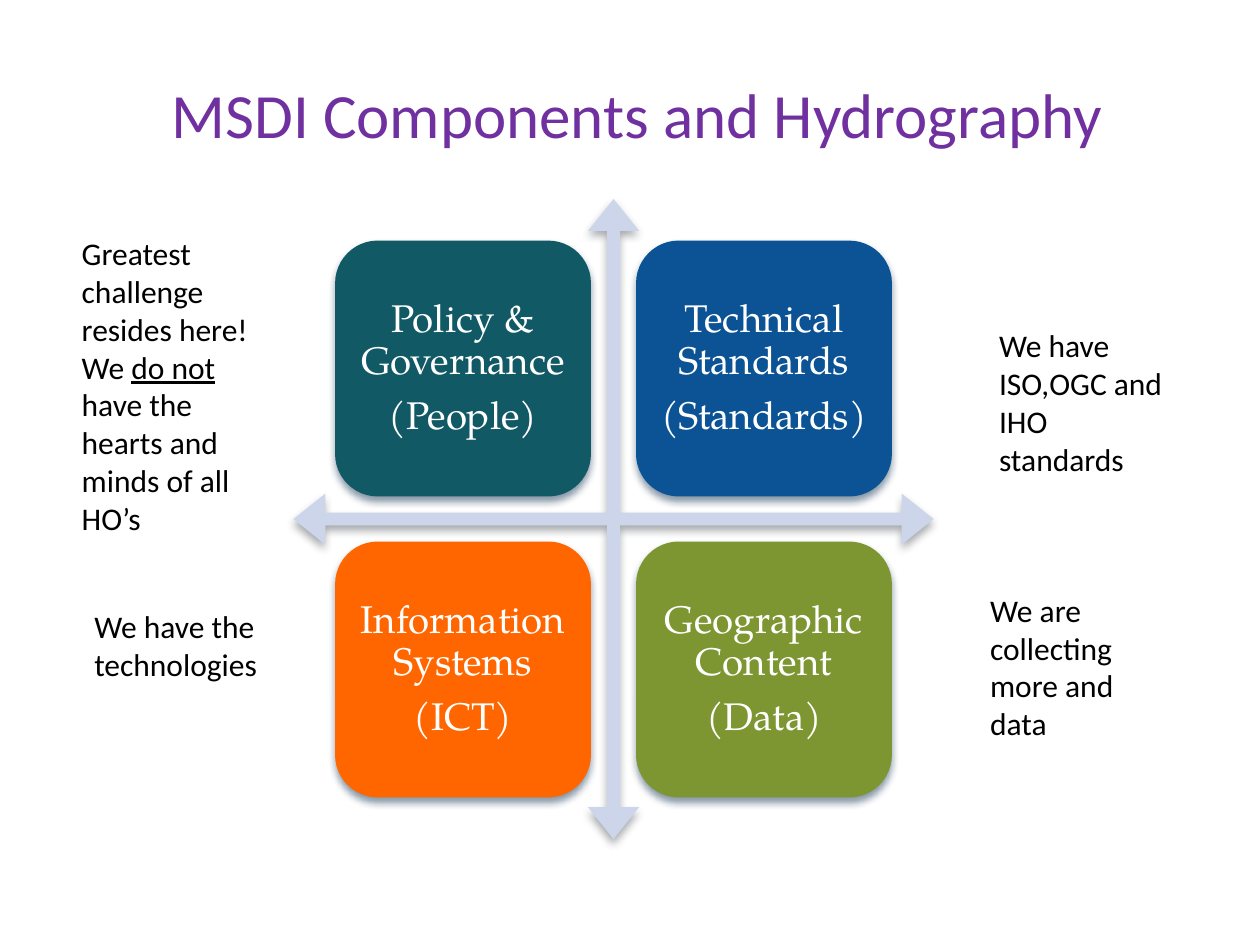
"""Build the slide on MSDI components and hydrography."""
from dataclasses import dataclass

from lxml import etree
from pptx import Presentation
from pptx.dml.color import RGBColor
from pptx.enum.shapes import MSO_SHAPE
from pptx.enum.text import MSO_ANCHOR, MSO_AUTO_SIZE, PP_ALIGN
from pptx.oxml.ns import qn
from pptx.util import Pt

QUAD_ARROW = MSO_SHAPE.QUAD_ARROW
ROUNDED = MSO_SHAPE.ROUNDED_RECTANGLE
MIDDLE = MSO_ANCHOR.MIDDLE
TOP = MSO_ANCHOR.TOP
CENTER = PP_ALIGN.CENTER
LEFT = PP_ALIGN.LEFT
GROW = MSO_AUTO_SIZE.SHAPE_TO_FIT_TEXT


@dataclass(frozen=True)
class Theme:
    body_font: str = "Calibri"
    tile_font: str = "TeX Gyre Pagella"
    title_size: float = 36
    tile_size: float = 22
    note_size: float = 18
    title: str = "7030A0"
    note: str = "000000"
    tile_text: str = "FFFFFF"
    axes: str = "CCD5EA"
    axes_shadow: str = "474B53"
    tile_shadow: str = "042747"
    policy: str = "115964"
    standards: str = "0B5394"
    systems: str = "FF6600"
    content: str = "7E9632"


def write(frame, paragraphs, *, font, size, color, align=LEFT, anchor=TOP,
          line_spacing=None, space_after=None, underlined=None):
    frame.word_wrap = True
    frame.vertical_anchor = anchor
    for index, runs in enumerate(paragraphs):
        paragraph = frame.add_paragraph() if index else frame.paragraphs[0]
        paragraph.alignment = align
        paragraph.line_spacing = line_spacing
        if space_after is not None:
            paragraph.space_after = Pt(space_after)
        for text in runs:
            run = paragraph.add_run()
            run.text = text
            run.font.name = font
            run.font.size = Pt(size)
            run.font.color.rgb = RGBColor.from_string(color)
            if text == underlined:
                run.font.underline = True


class SlideBuilder:
    def __init__(self, slide, theme):
        self.slide = slide
        self.theme = theme

    def title(self, text, box):
        heading = self.slide.shapes.add_textbox(*map(Pt, box))
        heading.text_frame.margin_left = Pt(15.2)
        write(heading.text_frame, [[text]], font=self.theme.body_font,
              size=self.theme.title_size, color=self.theme.title,
              align=CENTER, anchor=MIDDLE)

    def shadowed_shape(self, preset, center, size, fill, shadow):
        left, top = (middle - size / 2 for middle in center)
        shape = self.slide.shapes.add_shape(
            preset, Pt(left), Pt(top), Pt(size), Pt(size))
        shape.fill.solid()
        shape.fill.fore_color.rgb = RGBColor.from_string(fill)
        shape.line.fill.background()
        shape.shadow.inherit = False
        effects = shape._element.spPr.find(qn("a:effectLst"))
        outer = etree.SubElement(
            effects, qn("a:outerShdw"), blurRad=str(Pt(4.5)), dist=str(Pt(3)),
            dir="5400000", rotWithShape="0")
        tint = etree.SubElement(outer, qn("a:srgbClr"), val=shadow)
        etree.SubElement(tint, qn("a:alpha"), val="48000")
        return shape

    def axes(self, center, size):
        cross = self.shadowed_shape(QUAD_ARROW, center, size, self.theme.axes,
                                    self.theme.axes_shadow)
        for index, value in enumerate((0.02, 0.04, 0.05)):
            cross.adjustments[index] = value

    def tile(self, lines, center, size, fill):
        tile = self.shadowed_shape(ROUNDED, center, size, fill,
                                   self.theme.tile_shadow)
        frame = tile.text_frame
        frame.margin_left = frame.margin_right = Pt(6.5)
        frame.margin_top = frame.margin_bottom = Pt(6.5)
        write(frame, [[line] for line in lines], font=self.theme.tile_font,
              size=self.theme.tile_size, color=self.theme.tile_text,
              align=CENTER, anchor=MIDDLE, line_spacing=0.9, space_after=7.7)

    def note(self, runs, box, underlined=None):
        note = self.slide.shapes.add_textbox(*map(Pt, box))
        write(note.text_frame, [runs], font=self.theme.body_font,
              size=self.theme.note_size, color=self.theme.note,
              underlined=underlined)
        note.text_frame.auto_size = GROW


def main():
    deck = Presentation()
    deck.slide_width, deck.slide_height = Pt(720), Pt(540)
    theme = Theme()
    builder = SlideBuilder(deck.slides.add_slide(deck.slide_layouts[6]), theme)

    builder.title("MSDI Components and Hydrography", (36, 21.6, 648, 86.4))

    center_x, center_y = 350.6, 296.6
    builder.axes((center_x, center_y), 365.8)

    tile_size, tile_pitch = 146.2, 172
    components = [
        ("Policy & Governance", "(People)", theme.policy),
        ("Technical Standards", "(Standards)", theme.standards),
        ("Information Systems", "(ICT)", theme.systems),
        ("Geographic Content", "(Data)", theme.content),
    ]
    for index, (name, aspect, fill) in enumerate(components):
        row, column = divmod(index, 2)
        tile_center = (center_x + (column - 0.5) * tile_pitch,
                       center_y + (row - 0.5) * tile_pitch)
        builder.tile((name, aspect), tile_center, tile_size, fill)

    builder.note(["Greatest challenge resides here! We ", "do not ",
                  "have the hearts and minds of all HO’s"],
                 (39.6, 130.3, 118.8, 181.4), underlined="do not ")
    builder.note(["We have ISO,OGC and IHO standards"],
                 (563.8, 182.9, 113, 94.3))
    builder.note(["We have the technologies"], (46.8, 343.4, 108, 51.1))
    builder.note(["We are collecting more and data"],
                 (558.7, 334.1, 113, 94.3))

    deck.save("out.pptx")


if __name__ == "__main__":
    main()
